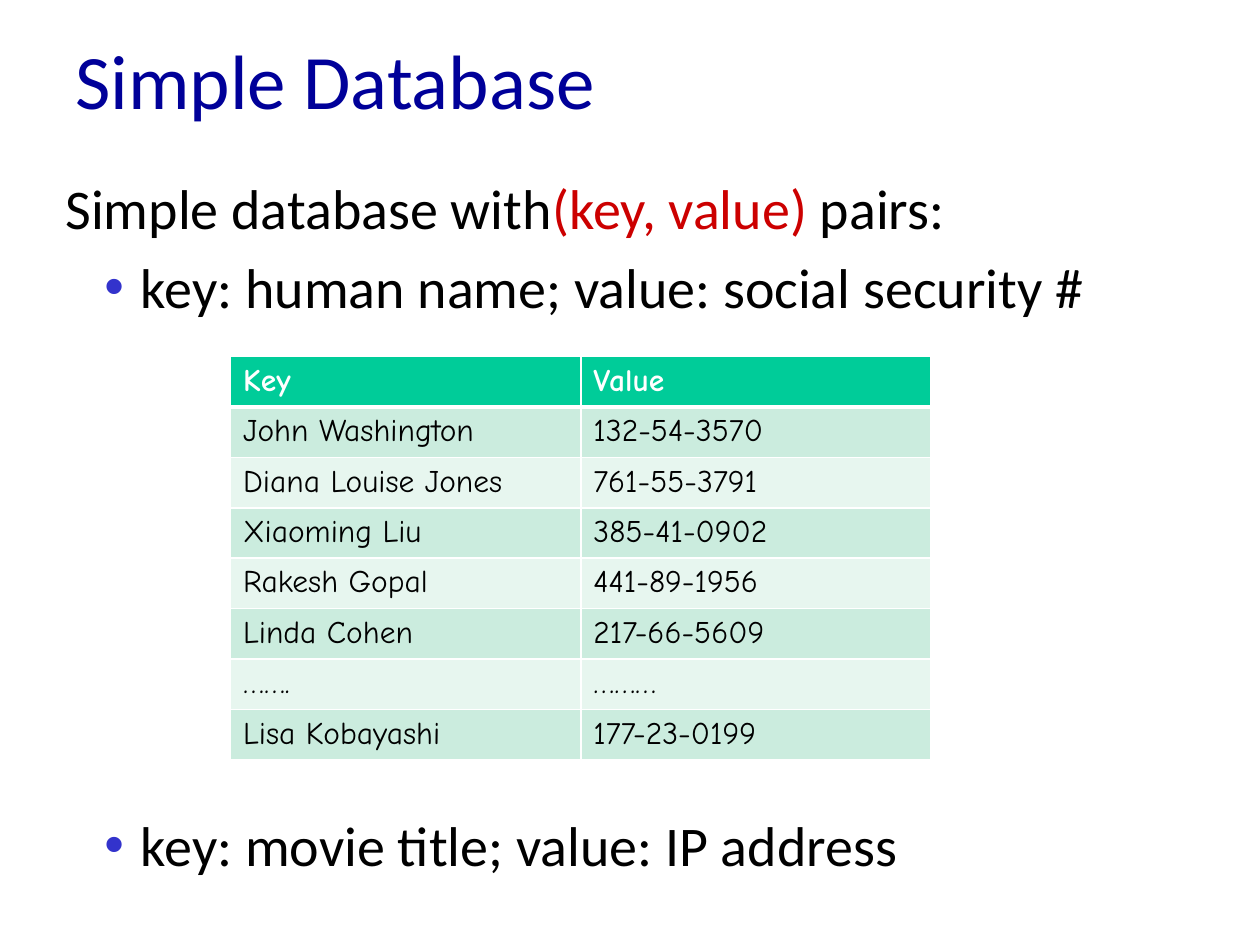
from dataclasses import dataclass

from lxml.etree import SubElement
from pptx import Presentation
from pptx.dml.color import RGBColor as RGB
from pptx.enum.text import MSO_ANCHOR as Anchor
from pptx.oxml.ns import qn
from pptx.util import Inches, Pt


@dataclass(frozen=True)
class Theme:
    font: str = "Calibri"
    table_font: str = "Comic Neue"
    title_size: int = 44
    body_size: int = 32
    table_size: int = 18
    title: str = "000099"
    ink: str = "000000"
    accent: str = "CC0000"
    bullet: str = "3333CC"
    white: str = "FFFFFF"
    header: str = "00CC99"
    bands: tuple = ("CBECDE", "E7F6EF")


THEME = Theme()
WIDTH, HEIGHT = 10, 7.5
BODY_LEFT, BODY_WIDTH, BODY_HEIGHT = 0.42, 9.58, 1.48
COLUMN, ROW = 2.78, 0.4
RECORDS = [
    ("Key", "Value"),
    ("John Washington", "132-54-3570"),
    ("Diana Louise Jones", "761-55-3791"),
    ("Xiaoming Liu", "385-41-0902"),
    ("Rakesh Gopal", "441-89-1956"),
    ("Linda Cohen", "217-66-5609"),
    ("…….", "………"),
    ("Lisa Kobayashi", "177-23-0199"),
]


def add_text_frame(page, left, top, width, height):
    box = page.shapes.add_textbox(*map(Inches, (left, top, width, height)))
    box.text_frame.word_wrap = True
    return box.text_frame


def style(para, size, color, font=THEME.font, bold=False):
    para.font.name = font
    para.font.size = Pt(size)
    para.font.bold = bold
    para.font.color.rgb = RGB.from_string(color)


def make_bullet(para):
    props = para._p.get_or_add_pPr()
    props.set("marL", str(Inches(0.5)))
    props.set("indent", str(Inches(-0.19)))
    color = SubElement(props, qn("a:buClr"))
    SubElement(color, qn("a:srgbClr"), val=THEME.bullet)
    SubElement(props, qn("a:buFont"), typeface="Arial")
    SubElement(props, qn("a:buChar"), char="•")


def write_bullet(para, text, space_before=0):
    para.text = text
    para.space_before = Pt(space_before)
    make_bullet(para)
    style(para, THEME.body_size, THEME.ink)


def add_title(page):
    frame = add_text_frame(page, 0.5, 0, 9, 1.25)
    frame.vertical_anchor = Anchor.MIDDLE
    para = frame.paragraphs[0]
    para.text = "Simple Database"
    style(para, THEME.title_size, THEME.title)


def add_introduction(page):
    frame = add_text_frame(page, BODY_LEFT, 1.33, BODY_WIDTH, BODY_HEIGHT)
    lead = frame.paragraphs[0]
    style(lead, THEME.body_size, THEME.ink)
    for text, color in (("Simple database with", THEME.ink),
                        ("(key, value) ", THEME.accent),
                        ("pairs:", THEME.ink)):
        span = lead.add_run()
        span.text = text
        span.font.color.rgb = RGB.from_string(color)
    write_bullet(frame.add_paragraph(),
                 " key: human name; value: social security #", 6.4)


def add_second_example(page):
    frame = add_text_frame(page, BODY_LEFT, 5.75, BODY_WIDTH, BODY_HEIGHT)
    frame.margin_top = Inches(0.68)
    write_bullet(frame.paragraphs[0], " key: movie title; value: IP address")


def set_borders(cell, **widths):
    """Draw white borders; widths in points by side: L, R, T, B."""
    props = cell._tc.get_or_add_tcPr()
    for side, width in widths.items():
        line = SubElement(props, qn(f"a:ln{side}"), w=str(Pt(width)))
        fill = SubElement(line, qn("a:solidFill"))
        SubElement(fill, qn("a:srgbClr"), val=THEME.white)


def fill_cell(cell, text, row):
    is_header = row == 0
    cell.text = text
    style(cell.text_frame.paragraphs[0], THEME.table_size,
          THEME.white if is_header else THEME.ink,
          THEME.table_font, is_header)
    set_borders(cell, L=1, R=1, T=3 if row == 1 else 1, B=3 if is_header else 1)
    cell.fill.solid()
    color = THEME.header if is_header else THEME.bands[(row - 1) % 2]
    cell.fill.fore_color.rgb = RGB.from_string(color)


def add_records_table(page):
    rows, columns = len(RECORDS), len(RECORDS[0])
    area = map(Inches, (1.83, 2.83, columns * COLUMN, rows * ROW))
    table = page.shapes.add_table(rows, columns, *area).table
    for row, record in enumerate(RECORDS):
        for column, text in enumerate(record):
            fill_cell(table.cell(row, column), text, row)


def main():
    deck = Presentation()
    deck.slide_width, deck.slide_height = Inches(WIDTH), Inches(HEIGHT)
    page = deck.slides.add_slide(deck.slide_layouts[6])
    add_records_table(page)
    add_introduction(page)
    add_title(page)
    add_second_example(page)
    deck.save("out.pptx")


if __name__ == "__main__":
    main()
